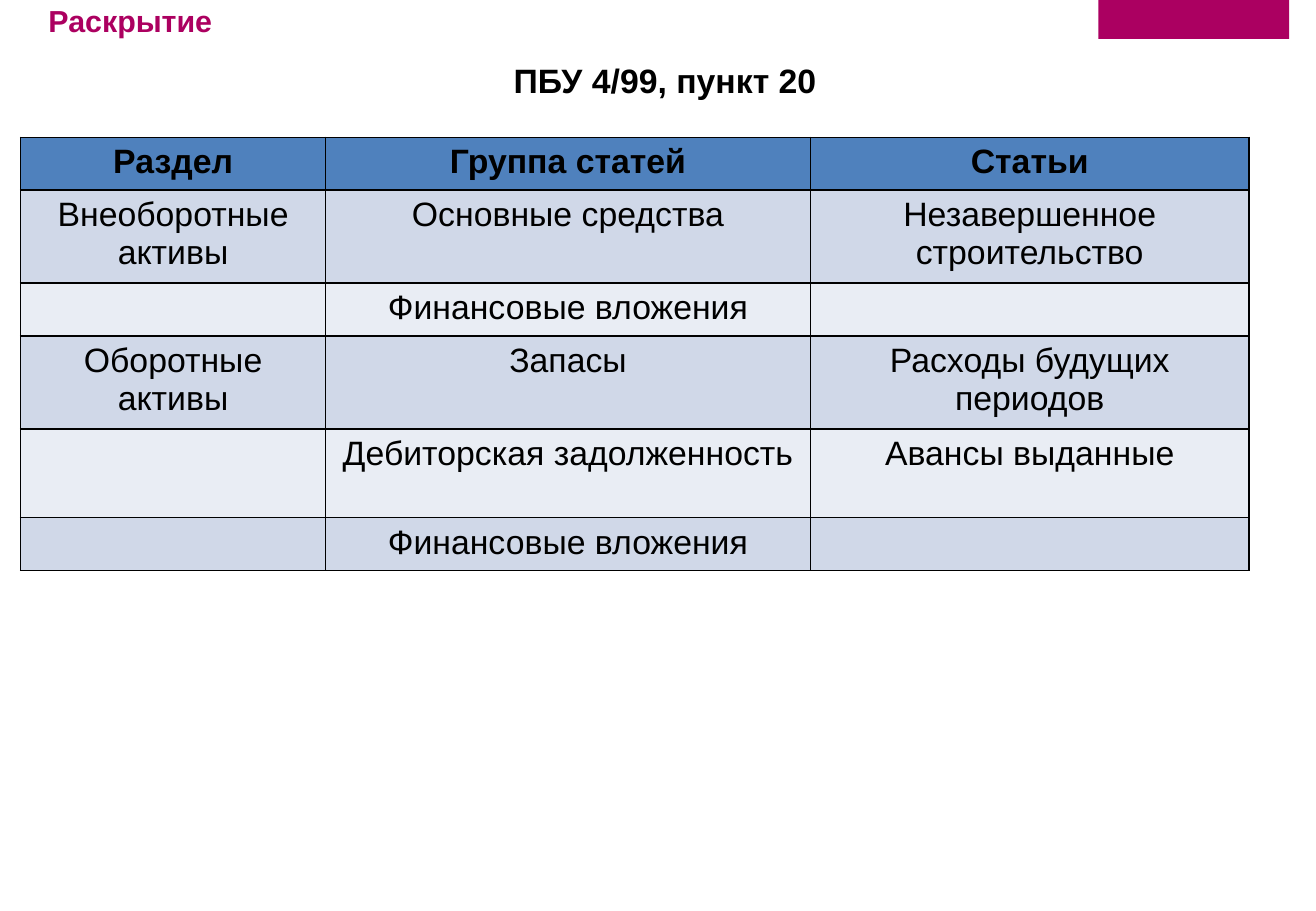
from dataclasses import dataclass

import pptx
import pptx.dml.color
import pptx.enum.shapes
import pptx.enum.text
import pptx.oxml
import pptx.oxml.ns
import pptx.util

EMU_PER_PX = 9144
ALIGN = pptx.enum.text.PP_ALIGN


@dataclass(frozen=True)
class Theme:
    font: str = "Arial"
    ink: str = "000000"
    accent: str = "AC0060"
    mark: str = "AB0061"
    header: str = "4F81BD"
    bands: tuple[str, str] = ("D0D8E8", "E9EDF4")
    heading_size: int = 18
    body_size: int = 20
    border_width: int = 1


@dataclass(frozen=True)
class Box:
    left: int
    top: int
    width: int
    height: int

    def emu(self) -> tuple[int, int, int, int]:
        return px(self.left), px(self.top), px(self.width), px(self.height)


@dataclass(frozen=True)
class Label:
    text: str
    box: Box
    size: int
    color: str
    align: ALIGN


@dataclass(frozen=True)
class Row:
    height: int
    section: str
    group: str
    article: str


THEME = Theme()

LABELS = (
    Label("ПБУ 4/99, пункт 20", Box(51, 44, 993, 138),
          THEME.body_size, THEME.ink, ALIGN.CENTER),
    Label("Раскрытие", Box(30, -3, 1048, 40),
          THEME.heading_size, THEME.accent, ALIGN.LEFT),
)

COLUMN_WIDTHS = (251, 399, 361)
ROWS = (
    Row(43, "Раздел", "Группа статей", "Статьи"),
    Row(76, "Внеоборотные активы", "Основные средства", "Незавершенное строительство"),
    Row(43, "", "Финансовые вложения", ""),
    Row(76, "Оборотные активы", "Запасы", "Расходы будущих периодов"),
    Row(73, "", "Дебиторская задолженность", "Авансы выданные"),
    Row(43, "", "Финансовые вложения", ""),
)
TABLE_BOX = Box(17, 113, sum(COLUMN_WIDTHS), sum(row.height for row in ROWS))
MARK_BOX = Box(904, 0, 157, 32)


def px(length: int) -> int:
    return pptx.util.Emu(length * EMU_PER_PX)


def rgb(color: str) -> pptx.dml.color.RGBColor:
    return pptx.dml.color.RGBColor.from_string(color)


def write(frame, text: str, size: int, color: str, bold: bool, align: ALIGN) -> None:
    frame.word_wrap = True
    paragraph = frame.paragraphs[0]
    paragraph.text = text
    paragraph.alignment = align
    paragraph.font.name = THEME.font
    paragraph.font.size = pptx.util.Pt(size)
    paragraph.font.bold = bold
    paragraph.font.color.rgb = rgb(color)


def draw_label(slide, label: Label) -> None:
    frame = slide.shapes.add_textbox(*label.box.emu()).text_frame
    write(frame, label.text, label.size, label.color, True, label.align)


def draw_borders(cell) -> None:
    properties = cell._tc.get_or_add_tcPr()
    width = pptx.util.Pt(THEME.border_width)
    for position, side in enumerate(("lnL", "lnR", "lnT", "lnB")):
        properties.insert(position, pptx.oxml.parse_xml(
            f'<a:{side} {pptx.oxml.ns.nsdecls("a")} w="{width}">'
            f'<a:solidFill><a:srgbClr val="{THEME.ink}"/></a:solidFill></a:{side}>'
        ))


def draw_table(slide) -> None:
    table = slide.shapes.add_table(
        len(ROWS), len(COLUMN_WIDTHS), *TABLE_BOX.emu()).table
    table.horz_banding = False
    for column, width in zip(table.columns, COLUMN_WIDTHS):
        column.width = px(width)
    for index, row in enumerate(ROWS):
        table.rows[index].height = px(row.height)
        is_header = index == 0
        fill = THEME.header if is_header else THEME.bands[(index - 1) % 2]
        for column, text in enumerate((row.section, row.group, row.article)):
            cell = table.cell(index, column)
            cell.margin_left = cell.margin_right = px(11)
            cell.margin_top = cell.margin_bottom = px(5)
            cell.fill.solid()
            cell.fill.fore_color.rgb = rgb(fill)
            write(cell.text_frame, text, THEME.body_size, THEME.ink,
                  is_header, ALIGN.CENTER)
            draw_borders(cell)


def draw_mark(slide) -> None:
    mark = slide.shapes.add_shape(
        pptx.enum.shapes.MSO_SHAPE.RECTANGLE, *MARK_BOX.emu())
    mark.shadow.inherit = False
    mark.fill.solid()
    mark.fill.fore_color.rgb = rgb(THEME.mark)
    mark.line.fill.background()


def main() -> None:
    presentation = pptx.Presentation()
    presentation.slide_width = px(1083)
    presentation.slide_height = px(750)
    slide = presentation.slides.add_slide(presentation.slide_layouts[6])
    for label in LABELS:
        draw_label(slide, label)
    draw_table(slide)
    draw_mark(slide)
    presentation.save("out.pptx")


if __name__ == "__main__":
    main()
